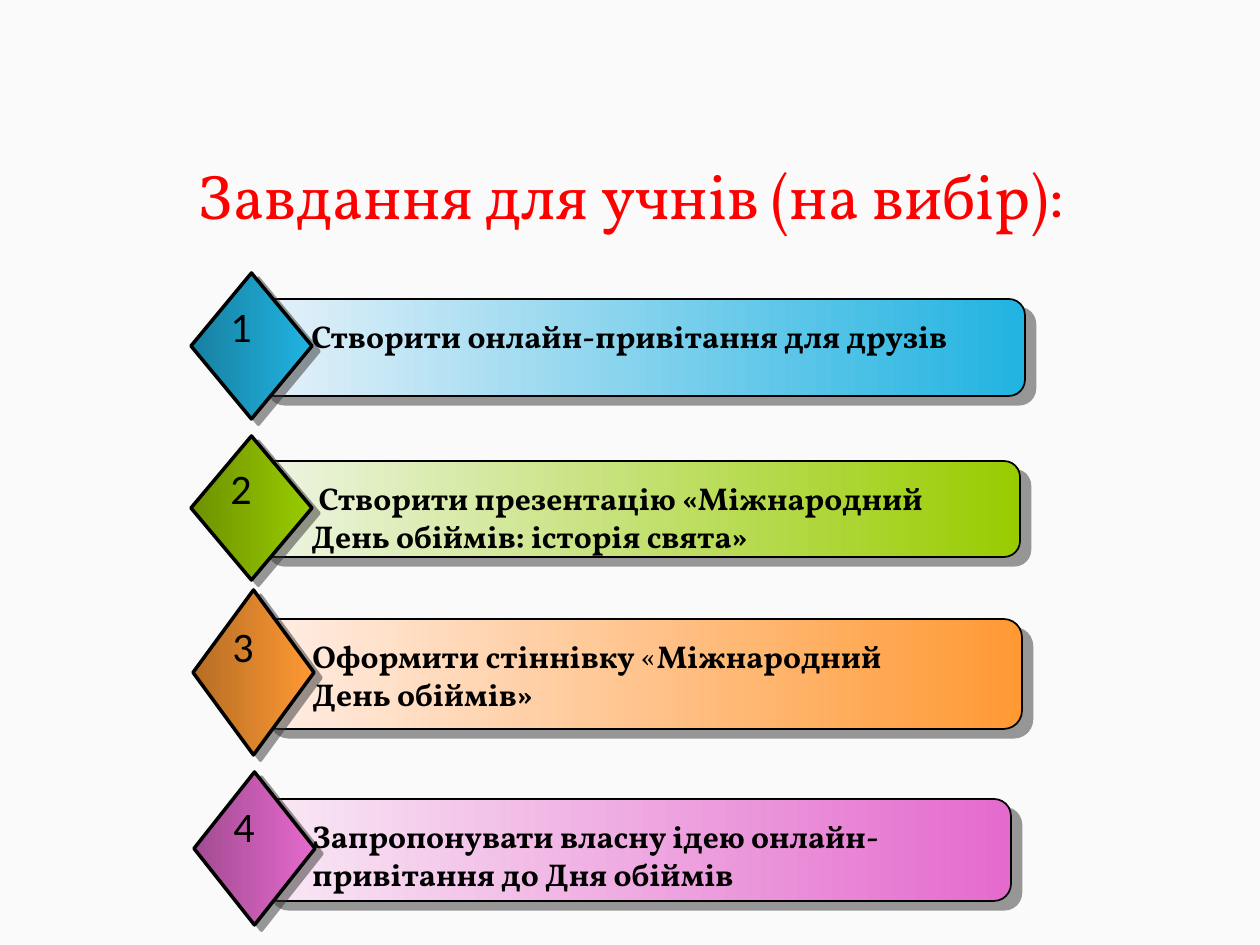
from lxml import etree
from pptx import Presentation
from pptx.dml.color import RGBColor
from pptx.enum.shapes import MSO_SHAPE as Shape
from pptx.enum.text import MSO_ANCHOR as Anchor, MSO_AUTO_SIZE as AutoSize, PP_ALIGN as Align
from pptx.oxml import parse_xml
from pptx.oxml.ns import nsdecls, qn
from pptx.util import Emu, Pt

SCALE = 914400 / 126
SERIF, SANS = "Vollkorn", "Calibri"
BOLD = {"name": SERIF, "size": Pt(18), "bold": True}
DIGIT = {"name": SANS, "size": Pt(24)}
HEADING = {"name": SERIF, "size": Pt(36)}

TASKS = [
    ((258, 299, 767, 97), "21B3E1", (299, 716, 50),
     [("Створити онлайн-привітання для друзів", {})]),
    ((258, 461, 762, 96), "99CC00", (299, 684, 89),
     [(" ", {"name": SANS}),
      ("Створити презентацію «Міжнародний День обіймів: історія свята»", {})]),
    ((260, 619, 762, 110), "FF9933", (300, 602, 89),
     [("Оформити стіннівку ", {}), ("«", {"bold": False}),
      ("Міжнародний День обіймів»", {})]),
    ((261, 799, 750, 102), "E46ACD", (300, 709, 89),
     [("Запропонувати власну ідею онлайн-привітання до Дня обіймів", {})]),
]


def px(value):
    return Emu(round(value * SCALE))


def color(value):
    return RGBColor.from_string(value)


def apply(target, values):
    for name, value in values.items():
        setattr(target, name, value)


class Painter:
    ink = "000000"
    shadow = "333333"

    def __init__(self, slide):
        self.slide = slide

    def background(self, value):
        fill = self.slide.background.fill
        fill.solid()
        fill.fore_color.rgb = color(value)

    def panel(self, parent, kind, area, accent, change, line, distance, angle):
        shape = parent.add_shape(kind, *map(px, area))
        shape.shadow.inherit = False
        shape.line.color.rgb = color(self.ink)
        shape.line.width = Pt(line)
        modifier, amount = change
        gradient = parse_xml(
            f'<a:gradFill {nsdecls("a")} rotWithShape="1"><a:gsLst>'
            f'<a:gs pos="0"><a:srgbClr val="{accent}">'
            f'<a:{modifier} val="{amount}"/></a:srgbClr></a:gs>'
            f'<a:gs pos="100000"><a:srgbClr val="{accent}"/></a:gs>'
            '</a:gsLst><a:lin ang="0" scaled="1"/></a:gradFill>')
        properties = shape.element.spPr
        properties.find(qn("a:prstGeom")).addnext(gradient)
        effects = properties.find(qn("a:effectLst"))
        outer = etree.SubElement(effects, qn("a:outerShdw"), dist=str(Pt(distance)),
                                 dir=str(angle * 60000), algn="ctr", rotWithShape="0")
        tone = etree.SubElement(outer, qn("a:srgbClr"), val=self.shadow)
        etree.SubElement(tone, qn("a:alpha"), val="50000")

    def text(self, parent, area, runs, font, ink=ink, frame=None, layout=None):
        box = parent.add_textbox(*map(px, area))
        apply(box.text_frame, {"word_wrap": True, **(frame or {})})
        para = box.text_frame.paragraphs[0]
        apply(para, layout or {})
        for words, changes in runs:
            span = para.add_run()
            span.text = words
            apply(span.font, {**font, **changes})
            span.font.color.rgb = color(ink)

    def task(self, number, bar, accent, label, runs):
        left, top, width, height = bar
        label_left, label_width, label_height = label
        group = self.slide.shapes.add_group_shape().shapes
        diamond = (left - 67, top - round(height * 0.265), 121, round(height * 1.5))
        self.panel(group, Shape.ROUNDED_RECTANGLE, bar, accent, ("tint", 21176), 1, 7.8, 40)
        self.panel(group, Shape.DIAMOND, diamond, accent, ("shade", 46275), 2, 5, 37)
        self.text(group, (label_left, top + 12, label_width, label_height), runs, BOLD,
                  frame={"auto_size": AutoSize.SHAPE_TO_FIT_TEXT})
        self.text(group, (left - 40, top - 5, 63, height), [(str(number), {})], DIGIT,
                  frame={"auto_size": AutoSize.SHAPE_TO_FIT_TEXT, "word_wrap": False})


def main():
    deck = Presentation()
    apply(deck, {"slide_width": px(1260), "slide_height": px(945)})
    painter = Painter(deck.slides.add_slide(deck.slide_layouts[6]))
    painter.background("FAFAFA")
    for number, task in enumerate(TASKS, 1):
        painter.task(number, *task)
    painter.text(painter.slide.shapes, (35, 122, 1192, 155),
                 [("Завдання для учнів (на вибір):", {})], HEADING, "FF0000",
                 {"vertical_anchor": Anchor.MIDDLE},
                 {"alignment": Align.CENTER, "line_spacing": 0.9})
    deck.save("out.pptx")


if __name__ == "__main__":
    main()
